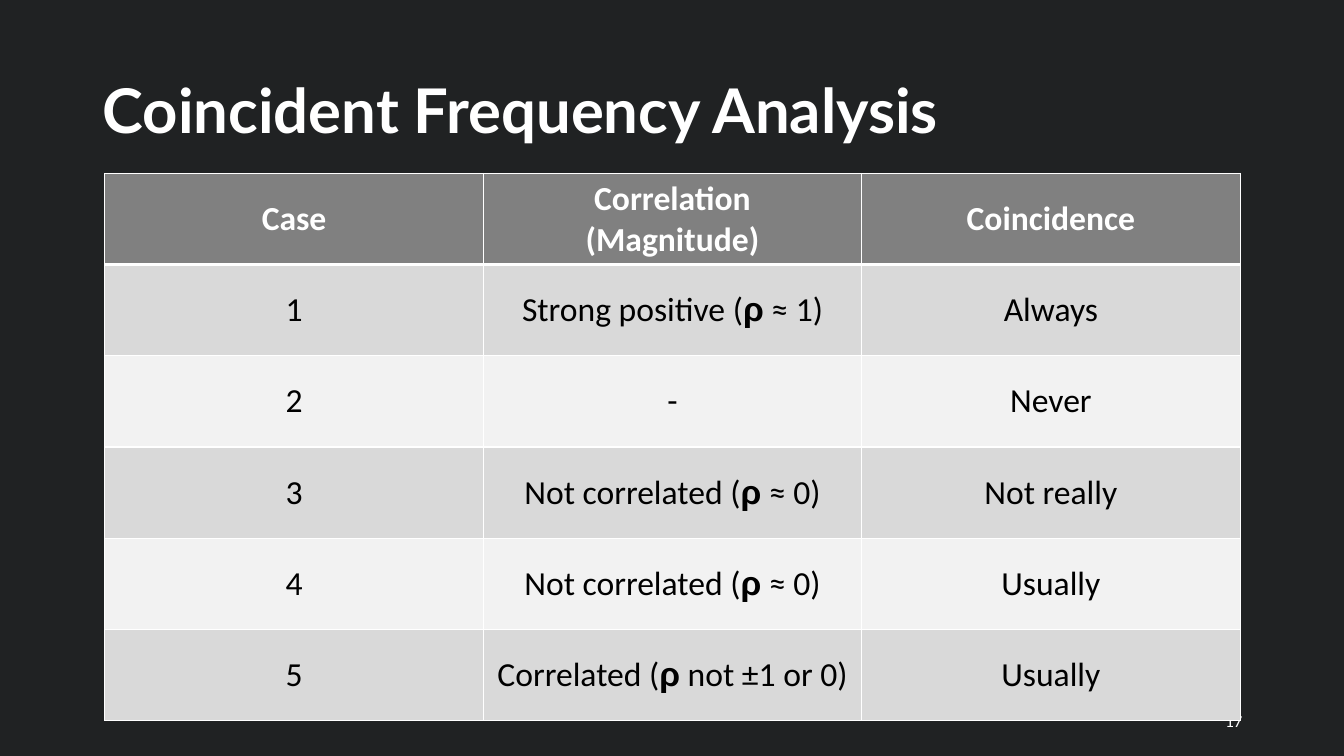
import pptx
import pptx.util
import pptx.dml.color
import pptx.enum.text
from lxml import etree
from pptx.oxml.ns import qn

Inches, Pt = pptx.util.Inches, pptx.util.Pt
ALIGN, ANCHOR = pptx.enum.text.PP_ALIGN, pptx.enum.text.MSO_ANCHOR

TITLE = "Coincident Frequency Analysis"
PAGE = "17"
HEAD = ("Case", "Correlation\n(Magnitude)", "Coincidence")
CASES = [
    ("1", "Strong positive (ρ ≈ 1)", "Always"),
    ("2", "-", "Never"),
    ("3", "Not correlated (ρ ≈ 0)", "Not really"),
    ("4", "Not correlated (ρ ≈ 0)", "Usually"),
    ("5", "Correlated (ρ not ±1 or 0)", "Usually"),
]
DARK, WHITE, BLACK = "202223", "FFFFFF", "000000"
GREY, BANDS = "808080", ("D9D9D9", "F2F2F2")
LEFT, TOP, WIDTH, HEIGHT = 1.04, 1.72, 11.26, 5.43


def color(code):
    return pptx.dml.color.RGBColor.from_string(code)


def write(frame, text, size, font="Calibri", ink=WHITE, bold=False,
          align=ALIGN.LEFT, space=None):
    """Fill a frame, one paragraph per line; ρ is set in bold Arial."""
    for i, line in enumerate(text.split("\n")):
        para = frame.add_paragraph() if i else frame.paragraphs[0]
        para.alignment = align
        para.line_spacing = space
        before, rho, after = line.partition("ρ")
        for part in filter(None, (before, rho, after)):
            run = para.add_run()
            run.text = part
            run.font.name = "Arial" if part == "ρ" else font
            run.font.size = Pt(size)
            run.font.bold = bold or part == "ρ"
            run.font.color.rgb = color(ink)


def add_label(slide, box, text, size, **form):
    frame = slide.shapes.add_textbox(*map(Inches, box)).text_frame
    frame.word_wrap = True
    frame.vertical_anchor = ANCHOR.MIDDLE
    write(frame, text, size, **form)


def add_edges(cell, top, base):
    """Draw white cell borders; top and base are widths in points."""
    props = cell._tc.get_or_add_tcPr()
    sides = {"a:lnL": 1, "a:lnR": 1, "a:lnT": top, "a:lnB": base}
    for i, (tag, width) in enumerate(sides.items()):
        line = etree.Element(qn(tag), w=str(Pt(width)))
        fill = etree.SubElement(line, qn("a:solidFill"))
        etree.SubElement(fill, qn("a:srgbClr"), val=WHITE)
        props.insert(i, line)


def add_grid(slide):
    rows = [HEAD] + CASES
    box = map(Inches, (LEFT, TOP, WIDTH, HEIGHT))
    table = slide.shapes.add_table(len(rows), len(HEAD), *box).table
    for r, row in enumerate(rows):
        head = r == 0
        for c, text in enumerate(row):
            cell = table.cell(r, c)
            cell.vertical_anchor = ANCHOR.MIDDLE
            cell.fill.solid()
            cell.fill.fore_color.rgb = color(GREY if head else BANDS[(r - 1) % 2])
            add_edges(cell, top=3 if r == 1 else 1, base=3 if head else 1)
            write(cell.text_frame, text, 24, bold=head,
                  ink=WHITE if head else BLACK, align=ALIGN.CENTER)


def main():
    deck = pptx.Presentation()
    deck.slide_width, deck.slide_height = Inches(13.33), Inches(7.5)
    slide = deck.slides.add_slide(deck.slide_layouts[6])
    slide.background.fill.solid()
    slide.background.fill.fore_color.rgb = color(DARK)
    add_label(slide, (0.92, 0.4, 11.5, 1.45), TITLE, 44, font="Lato",
              bold=True, space=0.9)
    add_label(slide, (9.42, 6.95, 3, 0.4), PAGE, 12, align=ALIGN.RIGHT)
    add_grid(slide)
    deck.save("out.pptx")


if __name__ == "__main__":
    main()
